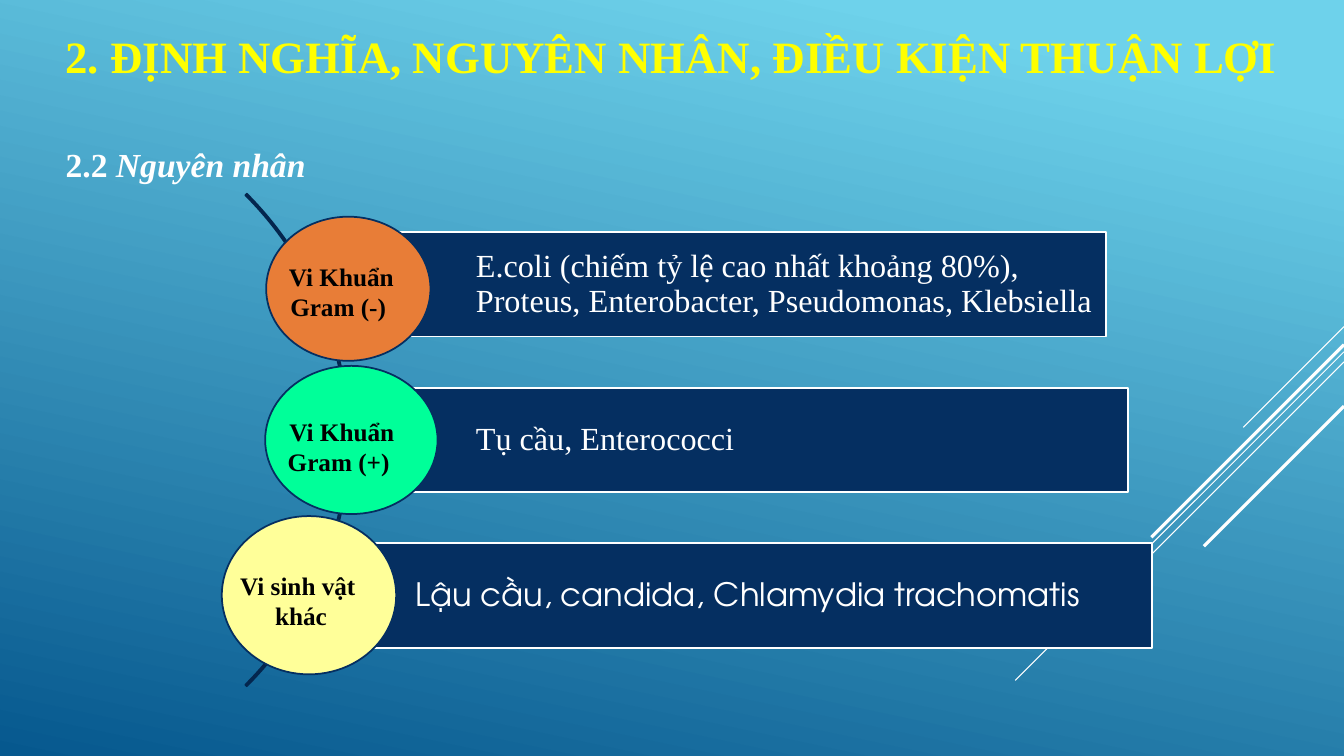
from lxml import etree
from pptx import Presentation
from pptx.dml.color import RGBColor
from pptx.enum.shapes import MSO_CONNECTOR, MSO_SHAPE
from pptx.enum.text import MSO_ANCHOR, MSO_AUTO_SIZE, PP_ALIGN
from pptx.oxml.ns import qn
from pptx.util import Inches, Pt

WHITE = RGBColor(0xFF, 0xFF, 0xFF)
BLACK = RGBColor(0, 0, 0)
YELLOW = RGBColor(0xFF, 0xFF, 0)
NAVY = RGBColor(0x05, 0x2F, 0x61)
DARK_NAVY = RGBColor(0x04, 0x26, 0x4E)
ORANGE = RGBColor(0xE8, 0x7D, 0x37)
GREEN = RGBColor(0, 0xFF, 0x99)
PALE_YELLOW = RGBColor(0xFF, 0xFF, 0x99)
SKY = RGBColor(0x6E, 0xD2, 0xEB)
OCEAN = RGBColor(0x06, 0x58, 0x8E)

SERIF = "Times New Roman"
SANS = "TeX Gyre Adventor"

STRAIGHT = MSO_CONNECTOR.STRAIGHT
RECTANGLE = MSO_SHAPE.RECTANGLE
OVAL = MSO_SHAPE.OVAL
BLOCK_ARC = MSO_SHAPE.BLOCK_ARC
MIDDLE = MSO_ANCHOR.MIDDLE
TOP = MSO_ANCHOR.TOP
LEFT = PP_ALIGN.LEFT
CENTER = PP_ALIGN.CENTER
NO_AUTOFIT = MSO_AUTO_SIZE.NONE

SLIDE_WIDTH = 13.33
TITLE = "2. ĐỊNH NGHĨA, NGUYÊN NHÂN, ĐIỀU KIỆN THUẬN LỢI"

# start y, horizontal run and width of each 45-degree stripe are listed below
STRIPES = [
    (3.24, 1.0, 0.75),
    (3.49, 3.26, 0.75),
    (3.59, 2.07, 0.75),
    (3.42, 1.91, 2.25),
    (4.03, 1.39, 2.25),
]

CAUSES = [
    {
        "bar": (3.9, 2.3, 7.07, 1.04),
        "text": "E.coli (chiếm tỷ lệ cao nhất khoảng 80%), "
                "Proteus, Enterobacter, Pseudomonas, Klebsiella",
        "font": SERIF,
        "circle": (2.64, 2.15, 1.63, 1.43),
        "color": ORANGE,
        "label_box": (2.69, 2.54, 1.39, 0.71),
        "label": ["Vi Khuẩn Gram (-) "],
    },
    {
        "bar": (3.9, 3.85, 7.29, 1.03),
        "text": "Tụ cầu, Enterococci",
        "font": SERIF,
        "circle": (2.63, 3.63, 1.71, 1.47),
        "color": GREEN,
        "label_box": (2.62, 4.08, 1.54, 0.71),
        "label": ["Vi Khuẩn Gram (+) "],
    },
    {
        "bar": (3.3, 5.39, 8.13, 1.04),
        "text": "Lậu cầu, candida, Chlamydia trachomatis",
        "font": SANS,
        "circle": (2.2, 5.12, 1.73, 1.57),
        "color": PALE_YELLOW,
        "label_box": (2.13, 5.61, 1.71, 0.71),
        "label": ["Vi sinh vật ", "khác"],
    },
]


def add_text(paragraph, text, *, size, color, font=SERIF, bold=False, italic=False):
    """Append a formatted run to the paragraph."""
    run = paragraph.add_run()
    run.text = text
    run.font.name = font
    run.font.size = Pt(size)
    run.font.color.rgb = color
    run.font.bold = bold
    run.font.italic = italic


class CauseSlide:
    """Draws styled elements on one slide."""

    def __init__(self, presentation):
        self.slide = presentation.slides.add_slide(presentation.slide_layouts[1])
        self.outline = Pt(1.25)

    def background(self):
        fill = self.slide.background.fill
        fill.gradient()
        fill.gradient_angle = 258
        for stop, position, color in zip(fill.gradient_stops, (0.1, 1), (SKY, OCEAN)):
            stop.position = position
            stop.color.rgb = color

    def stripe(self, top, run, width):
        line = self.slide.shapes.add_connector(
            STRAIGHT, Inches(SLIDE_WIDTH), Inches(top),
            Inches(SLIDE_WIDTH - run), Inches(top + run))
        line.line.color.rgb = WHITE
        line.line.width = Pt(width)
        etree.SubElement(line._element.spPr, qn("a:effectLst"))

    def placeholder(self, index, box, anchor):
        shape = self.slide.placeholders[index]
        shape.left, shape.top, shape.width, shape.height = map(Inches, box)
        frame = shape.text_frame
        frame.word_wrap = True
        frame.auto_size = NO_AUTOFIT
        frame.vertical_anchor = anchor
        paragraph = frame.paragraphs[0]
        paragraph.alignment = LEFT
        paragraph.space_before = Pt(0)
        return frame, paragraph

    def title(self, text):
        _, paragraph = self.placeholder(0, (0.55, -0.1, SLIDE_WIDTH, 1.31), MIDDLE)
        add_text(paragraph, text, size=32, color=YELLOW, bold=True)

    def subtitle(self, number, text):
        frame, paragraph = self.placeholder(1, (0.55, 1.41, 3.54, 0.84), TOP)
        frame.margin_top = Inches(0.02)
        properties = paragraph._p.get_or_add_pPr()
        properties.set("marL", "0")
        properties.set("indent", "0")
        etree.SubElement(properties, qn("a:buNone"))
        add_text(paragraph, number, size=24, color=WHITE, bold=True)
        add_text(paragraph, text, size=24, color=WHITE, bold=True, italic=True)

    def shape(self, kind, box, line, fill=None):
        shape = self.slide.shapes.add_shape(kind, *map(Inches, box))
        shape.shadow.inherit = False
        shape.line.color.rgb = line
        shape.line.width = self.outline
        if fill is None:
            shape.fill.background()
        else:
            shape.fill.solid()
            shape.fill.fore_color.rgb = fill
        return shape

    def arc(self):
        arc = self.shape(BLOCK_ARC, (-3.45, 0.91, 6.91, 6.91), DARK_NAVY)
        for index, value in enumerate((189, 27, 0.003)):
            arc.adjustments[index] = value

    def bar(self, box, text, font):
        frame = self.shape(RECTANGLE, box, WHITE, NAVY).text_frame
        frame.word_wrap = True
        frame.vertical_anchor = MIDDLE
        frame.margin_left = Inches(0.82)
        frame.margin_top = frame.margin_right = frame.margin_bottom = Inches(0.06)
        paragraph = frame.paragraphs[0]
        paragraph.alignment = LEFT
        paragraph.line_spacing = 0.9
        add_text(paragraph, text, size=23, color=WHITE, font=font)

    def label(self, box, lines):
        frame = self.slide.shapes.add_textbox(*map(Inches, box)).text_frame
        frame.word_wrap = True
        for index, text in enumerate(lines):
            paragraph = frame.add_paragraph() if index else frame.paragraphs[0]
            paragraph.alignment = CENTER
            add_text(paragraph, text, size=18, color=BLACK, bold=True)


def main():
    presentation = Presentation()
    presentation.slide_width = Inches(SLIDE_WIDTH)
    presentation.slide_height = Inches(7.5)

    slide = CauseSlide(presentation)
    slide.background()
    for stripe in STRIPES:
        slide.stripe(*stripe)
    slide.title(TITLE)
    slide.subtitle("2.2 ", "Nguyên nhân")
    slide.arc()
    for cause in CAUSES:
        slide.bar(cause["bar"], cause["text"], cause["font"])
        slide.shape(OVAL, cause["circle"], NAVY, cause["color"])
        slide.label(cause["label_box"], cause["label"])

    presentation.save("out.pptx")


if __name__ == "__main__":
    main()
